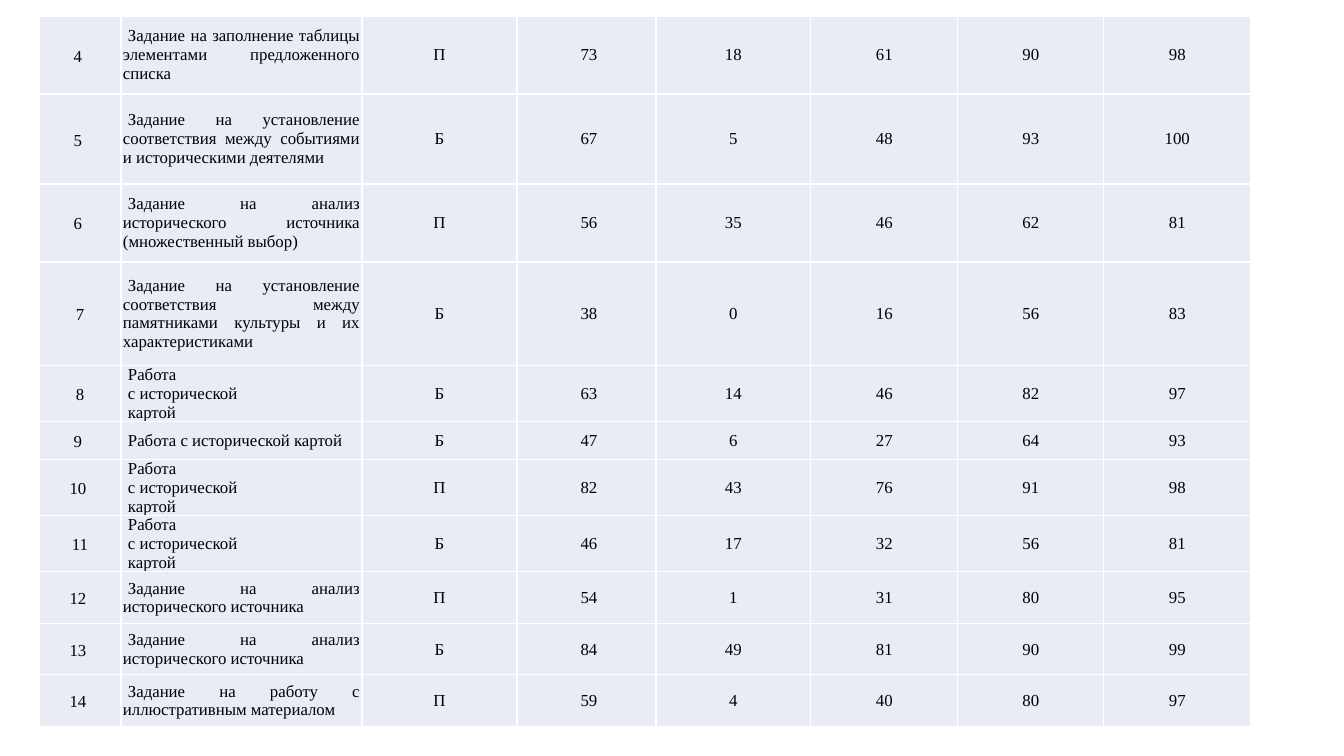
import pptx
import pptx.dml.color
import pptx.enum.text
import pptx.oxml
import pptx.oxml.ns
import pptx.util

SLIDE_WIDTH, SLIDE_HEIGHT = 1344, 756
PX = 914400 / 100.8

BLACK = pptx.dml.color.RGBColor(0x00, 0x00, 0x00)
WHITE = pptx.dml.color.RGBColor(0xFF, 0xFF, 0xFF)
LAVENDER = pptx.dml.color.RGBColor(0xE9, 0xEB, 0xF5)

FONT = "Times New Roman"
CENTER = pptx.enum.text.PP_ALIGN.CENTER
JUSTIFY = pptx.enum.text.PP_ALIGN.JUSTIFY

COLUMN_WIDTHS = [82, 241, 155, 139, 155, 147, 146, 147]
NUMBER, TASK, LEVEL, AVERAGE = range(4)
INDENTS = {TASK: 5, LEVEL: -8, AVERAGE: 5}

MAP_TASK = "Работа\nс исторической\nкартой"
SOURCE_TASK = "Задание на анализ исторического источника"

# Row height, then number, task, level, average and the four group results
TASKS = [
    (78, "4 ", "Задание на заполнение таблицы элементами предложенного списка",
     "П", 73, 18, 61, 90, 98),
    (90, "5 ", "Задание на установление соответствия между событиями и историческими деятелями",
     "Б", 67, 5, 48, 93, 100),
    (78, "6 ", "Задание на анализ исторического источника (множественный выбор)",
     "П", 56, 35, 46, 62, 81),
    (104, "7", "Задание на установление соответствия между памятниками культуры и их характеристиками",
     "Б", 38, 0, 16, 56, 83),
    (41, "8", MAP_TASK, "Б", 63, 14, 46, 82, 97),
    (38, "9 ", "Работа с исторической картой", "Б", 47, 6, 27, 64, 93),
    (41, "10 ", MAP_TASK, "П", 82, 43, 76, 91, 98),
    (41, "11", MAP_TASK, "Б", 46, 17, 32, 56, 81),
    (52, "12 ", SOURCE_TASK, "П", 54, 1, 31, 80, 95),
    (51, "13 ", SOURCE_TASK, "Б", 84, 49, 81, 90, 99),
    (52, "14 ", "Задание на работу с иллюстративным материалом",
     "П", 59, 4, 40, 80, 97),
]


def px(length):
    return pptx.util.Emu(round(length * PX))


def add_borders(cell):
    properties = cell._tc.get_or_add_tcPr()
    for side in ("lnL", "lnR", "lnT", "lnB"):
        properties.append(pptx.oxml.parse_xml(
            f'<a:{side} {pptx.oxml.ns.nsdecls("a")} w="{pptx.util.Pt(1)}">'
            f'<a:solidFill><a:srgbClr val="{WHITE}"/></a:solidFill></a:{side}>'))


def style_cell(cell):
    add_borders(cell)
    cell.fill.solid()
    cell.fill.fore_color.rgb = LAVENDER
    cell.vertical_anchor = pptx.enum.text.MSO_ANCHOR.MIDDLE
    cell.margin_left = cell.margin_right = px(2)
    cell.margin_top = cell.margin_bottom = 0


def write_paragraph(paragraph, text, column):
    paragraph.alignment = JUSTIFY if column == TASK else CENTER
    if column == NUMBER:
        paragraph.line_spacing = 1.15
        paragraph.space_after = pptx.util.Pt(10)
    if column in INDENTS:
        properties = paragraph._p.get_or_add_pPr()
        properties.set("marL", "0")
        properties.set("indent", str(px(INDENTS[column])))
    run = paragraph.add_run()
    run.text = text
    run.font.name = FONT
    run.font.size = pptx.util.Pt(12)
    run.font.color.rgb = BLACK


def fill_cell(cell, value, column):
    style_cell(cell)
    frame = cell.text_frame
    for index, line in enumerate(str(value).split("\n")):
        paragraph = frame.add_paragraph() if index else frame.paragraphs[0]
        write_paragraph(paragraph, line, column)


def add_results_table(slide):
    height = sum(task[0] for task in TASKS)
    results = slide.shapes.add_table(
        len(TASKS), len(COLUMN_WIDTHS),
        px(39), px(16), px(sum(COLUMN_WIDTHS)), px(height)).table
    results.first_row = results.horz_banding = False
    for column, width in zip(results.columns, COLUMN_WIDTHS):
        column.width = px(width)
    for row, (row_height, *values) in zip(results.rows, TASKS):
        row.height = px(row_height)
        for column, value in enumerate(values):
            fill_cell(row.cells[column], value, column)


def main():
    presentation = pptx.Presentation()
    presentation.slide_width = px(SLIDE_WIDTH)
    presentation.slide_height = px(SLIDE_HEIGHT)
    slide = presentation.slides.add_slide(presentation.slide_layouts[6])
    add_results_table(slide)
    presentation.save("out.pptx")


if __name__ == "__main__":
    main()
